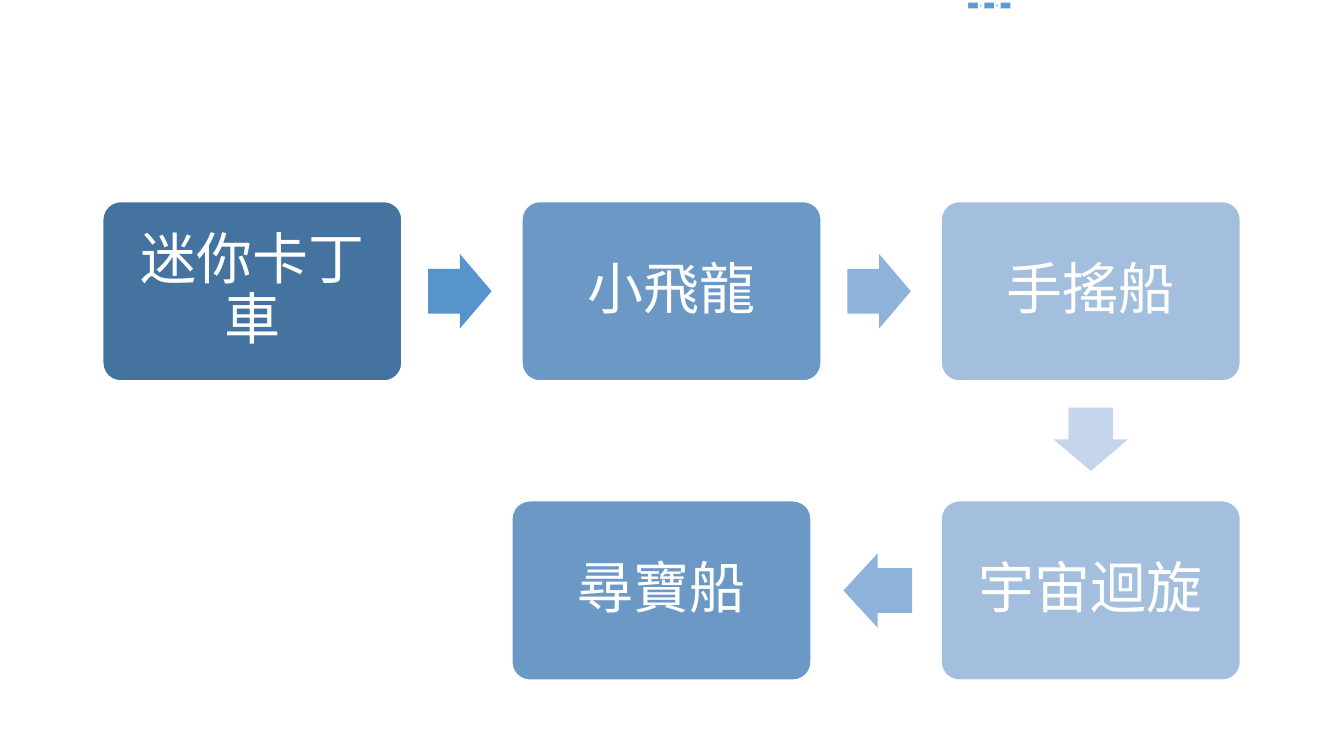
from pptx import Presentation
from pptx.dml.color import RGBColor
from pptx.enum.shapes import MSO_SHAPE
from pptx.enum.text import MSO_ANCHOR, PP_ALIGN
from pptx.util import Cm, Pt

ROUNDED = MSO_SHAPE.ROUNDED_RECTANGLE
ARROW = MSO_SHAPE.RIGHT_ARROW
MIDDLE = MSO_ANCHOR.MIDDLE
CENTER = PP_ALIGN.CENTER

WHITE = RGBColor(0xFF, 0xFF, 0xFF)
DARK_BLUE = RGBColor(0x43, 0x73, 0x9E)
MID_BLUE = RGBColor(0x6C, 0x98, 0xC5)
PALE_BLUE = RGBColor(0xA4, 0xBE, 0xDE)
ARROW_DARK = RGBColor(0x57, 0x94, 0xCB)
ARROW_MID = RGBColor(0x8E, 0xB3, 0xDB)
ARROW_PALE = RGBColor(0xC5, 0xD5, 0xEB)
MINI_BLUE = RGBColor(0x5B, 0x9B, 0xD5)
MINI_ARROW = RGBColor(0xB5, 0xCB, 0xE7)

BOX_WIDTH, BOX_HEIGHT = 7.54, 4.52
LEFT, PITCH = 2.59, 10.565
TOP_ROW, BOTTOM_ROW = 5.08, 12.62
ARROW_LENGTH, ARROW_HEIGHT = 1.6, 1.88
MINI_LEFT, MINI_PITCH, MINI_COUNT = 24.38, 0.41, 3


class FlowSlide:
    frame_format = {
        "word_wrap": True, "vertical_anchor": MIDDLE,
        "margin_left": Cm(0.43), "margin_right": Cm(0.43),
        "margin_top": Cm(0.43), "margin_bottom": Cm(0.43),
    }
    paragraph_format = {"alignment": CENTER, "line_spacing": 0.9}
    font_format = {"name": "Calibri", "size": Pt(40)}

    def __init__(self, presentation):
        self.slide = presentation.slides.add_slide(presentation.slide_layouts[6])
        self.shapes = self.slide.shapes

    def start_group(self):
        self.shapes = self.slide.shapes.add_group_shape().shapes

    def apply(self, target, values):
        for name, value in values.items():
            setattr(target, name, value)

    def shape(self, kind, left, top, width, height, color):
        shape = self.shapes.add_shape(kind, Cm(left), Cm(top), Cm(width), Cm(height))
        shape.shadow.inherit = False
        shape.fill.solid()
        shape.fill.fore_color.rgb = color
        return shape

    def box(self, left, top, color, text="", width=BOX_WIDTH, height=BOX_HEIGHT):
        shape = self.shape(ROUNDED, left, top, width, height, color)
        shape.adjustments[0] = 0.1
        shape.line.color.rgb = WHITE
        shape.line.width = Pt(1)
        if text:
            frame = shape.text_frame
            self.apply(frame, self.frame_format)
            paragraph = frame.paragraphs[0]
            paragraph.text = text
            self.apply(paragraph, self.paragraph_format)
            self.apply(paragraph.font, self.font_format)
            paragraph.font.color.rgb = WHITE

    def arrow(self, center_x, center_y, color, rotation=0,
              length=ARROW_LENGTH, height=ARROW_HEIGHT):
        shape = self.shape(ARROW, center_x - length / 2, center_y - height / 2,
                           length, height, color)
        shape.adjustments[0] = 0.6
        shape.adjustments[1] = 0.5
        shape.line.fill.background()
        shape.rotation = rotation


def main():
    presentation = Presentation()
    presentation.slide_width = Cm(33.87)
    presentation.slide_height = Cm(19.05)
    flow = FlowSlide(presentation)

    flow.start_group()
    for index in range(MINI_COUNT):
        left = MINI_LEFT + index * MINI_PITCH
        flow.box(left, 0.05, MINI_BLUE, width=0.28, height=0.18)
        if index < MINI_COUNT - 1:
            flow.arrow(left + 0.34, 0.14, MINI_ARROW, length=0.05, height=0.08)

    flow.start_group()
    columns = [LEFT + index * PITCH for index in range(3)]
    top_middle = TOP_ROW + BOX_HEIGHT / 2
    bottom_middle = BOTTOM_ROW + BOX_HEIGHT / 2
    rides = [
        (columns[0], TOP_ROW, DARK_BLUE, "迷你卡丁車"),
        (columns[1], TOP_ROW, MID_BLUE, "小飛龍"),
        (columns[2], TOP_ROW, PALE_BLUE, "手搖船"),
        (columns[2], BOTTOM_ROW, PALE_BLUE, "宇宙迴旋"),
        (12.9, BOTTOM_ROW, MID_BLUE, "尋寶船"),
    ]
    for ride in rides:
        flow.box(*ride)

    flow.arrow(columns[0] + 9, top_middle, ARROW_DARK)
    flow.arrow(columns[1] + 9, top_middle, ARROW_MID)
    flow.arrow(columns[2] + BOX_WIDTH / 2, 11.07, ARROW_PALE, rotation=90)
    flow.arrow(22.12, bottom_middle, ARROW_MID, rotation=180, length=1.73)

    presentation.save("out.pptx")


if __name__ == "__main__":
    main()
